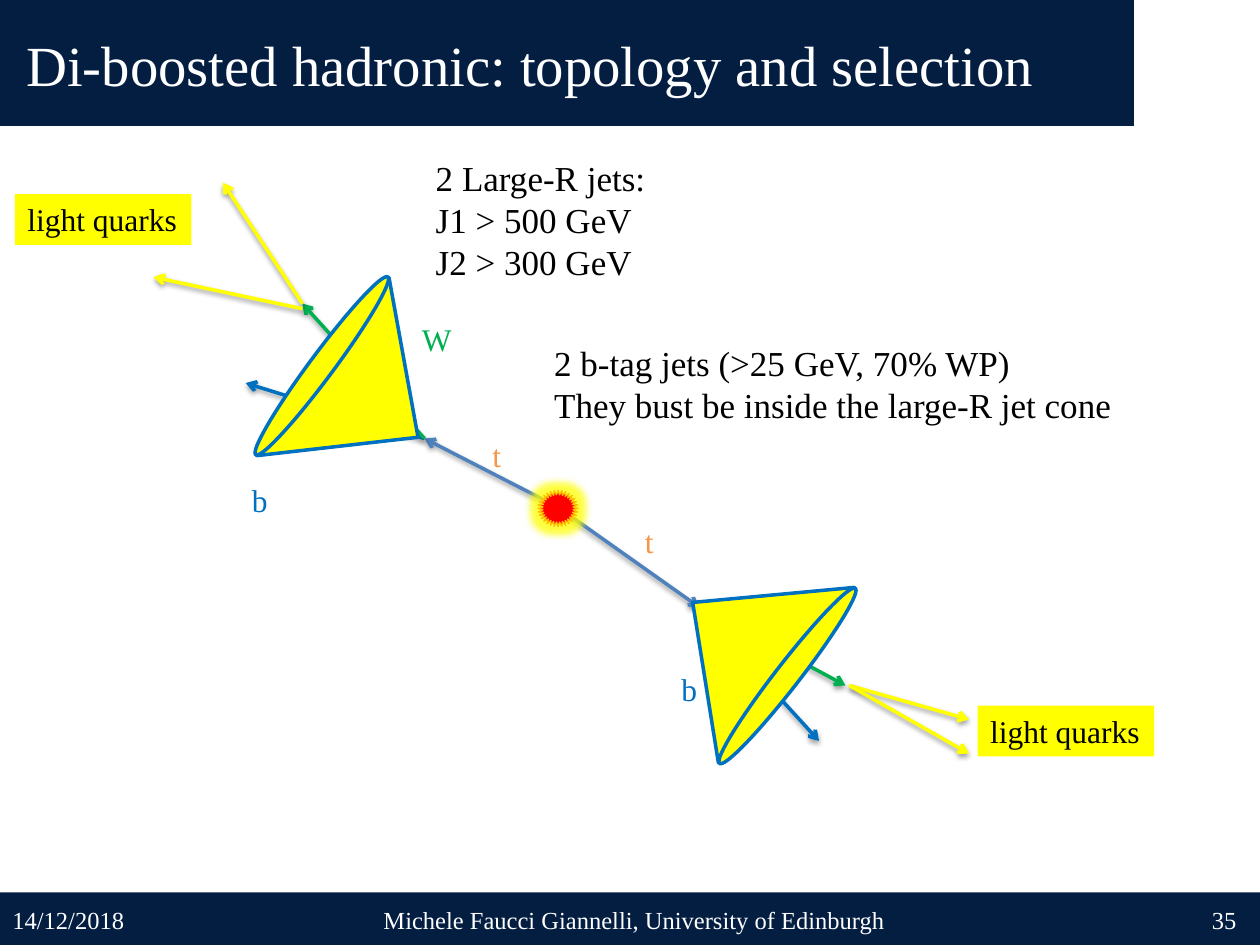
from dataclasses import dataclass
from math import cos, radians, sin
from typing import Optional

from lxml.etree import SubElement
from pptx import Presentation
from pptx.dml.color import RGBColor
from pptx.enum.shapes import MSO_CONNECTOR as Connector, MSO_SHAPE as Preset
from pptx.enum.text import MSO_ANCHOR as Anchor, PP_ALIGN as Align
from pptx.oxml.ns import qn
from pptx.util import Pt

NAVY = RGBColor(0x04, 0x1E, 0x42)
WHITE = RGBColor(0xFF, 0xFF, 0xFF)
BLACK = RGBColor(0x00, 0x00, 0x00)
YELLOW = RGBColor(0xFF, 0xFF, 0x00)
RED = RGBColor(0xFF, 0x00, 0x00)
AMBER = RGBColor(0xFF, 0xC0, 0x00)
ORANGE = RGBColor(0xF7, 0x96, 0x46)
STEEL = RGBColor(0x4F, 0x81, 0xBD)
BLUE = RGBColor(0x00, 0x70, 0xC0)
GREEN = RGBColor(0x00, 0xB0, 0x50)

CONE_WIDTH, CONE_HEIGHT, RIM_HEIGHT = 126.7, 67.7, 13.7
RIM_OFFSET = 34.6


@dataclass
class Block:
    left: float
    top: float
    width: float
    height: float
    preset: Preset = Preset.RECTANGLE
    fill: RGBColor = NAVY
    line: Optional[RGBColor] = None
    line_width: float = 2
    rotation: float = 0


@dataclass
class Arrow:
    start: tuple[float, float]
    end: tuple[float, float]
    color: RGBColor


@dataclass
class Cone:
    center_x: float
    center_y: float
    rotation: float


@dataclass
class Label:
    left: float
    top: float
    width: float
    height: float
    lines: tuple[str, ...]
    size: float = 18
    color: RGBColor = BLACK
    wrap: bool = False
    anchor: Anchor = Anchor.TOP
    align: Align = Align.LEFT
    fill: Optional[RGBColor] = None


def add_effect(shape, kind: str, color: RGBColor, alpha: int, **values: str) -> None:
    properties = shape._element.spPr
    effects = properties.find(qn("a:effectLst"))
    if effects is None:
        effects = SubElement(properties, qn("a:effectLst"))
    effect = SubElement(effects, qn(f"a:{kind}"), **values)
    tint = SubElement(effect, qn("a:srgbClr"), val=str(color))
    SubElement(tint, qn("a:alpha"), val=str(alpha * 1000))


def draw_block(page, block: Block):
    shape = page.shapes.add_shape(
        block.preset, Pt(block.left), Pt(block.top), Pt(block.width), Pt(block.height))
    shape.shadow.inherit = False
    shape.rotation = block.rotation
    shape.fill.solid()
    shape.fill.fore_color.rgb = block.fill
    if block.line is None:
        shape.line.fill.background()
    else:
        shape.line.color.rgb = block.line
        shape.line.width = Pt(block.line_width)
    return shape


def draw_arrow(page, arrow: Arrow) -> None:
    ends = [Pt(value) for value in arrow.start + arrow.end]
    connector = page.shapes.add_connector(Connector.STRAIGHT, *ends)
    connector.line.color.rgb = arrow.color
    connector.line.width = Pt(2)
    SubElement(connector.line._get_or_add_ln(), qn("a:tailEnd"), type="arrow")
    add_effect(connector, "outerShdw", BLACK, 38, blurRad=str(Pt(3.1)),
               dist=str(Pt(1.6)), dir="5400000", rotWithShape="0")


def draw_cone(page, cone: Cone) -> None:
    angle = radians(cone.rotation)
    rim_x = cone.center_x - RIM_OFFSET * sin(angle)
    rim_y = cone.center_y + RIM_OFFSET * cos(angle)
    parts = (
        (Preset.ISOSCELES_TRIANGLE, cone.center_x, cone.center_y, CONE_HEIGHT, cone.rotation),
        (Preset.OVAL, rim_x, rim_y, RIM_HEIGHT, (cone.rotation + 180) % 360),
    )
    for preset, x, y, height, rotation in parts:
        draw_block(page, Block(x - CONE_WIDTH / 2, y - height / 2, CONE_WIDTH, height,
                               preset, YELLOW, BLUE, rotation=rotation))


def draw_label(page, label: Label) -> None:
    box = page.shapes.add_textbox(
        Pt(label.left), Pt(label.top), Pt(label.width), Pt(label.height))
    if label.fill is not None:
        box.fill.solid()
        box.fill.fore_color.rgb = label.fill
    frame = box.text_frame
    frame.word_wrap = label.wrap
    frame.vertical_anchor = label.anchor
    font_values = {"name": "Times New Roman", "size": Pt(label.size)}
    for index, line in enumerate(label.lines):
        para = frame.paragraphs[0] if index == 0 else frame.add_paragraph()
        para.alignment = label.align
        span = para.add_run()
        span.text = line
        for name, value in font_values.items():
            setattr(span.font, name, value)
        span.font.color.rgb = label.color


BANDS = (Block(0, 0, 648, 72), Block(0, 510, 720, 30))
LEFT_TOP, LEFT_W = (242.6, 250.6), (172.8, 173.5)
RIGHT_W = (485.3, 391.7)
ARROWS = (
    Arrow((323.3, 293), (399.6, 347), STEEL),
    Arrow((319.7, 290.2), LEFT_TOP, STEEL),
    Arrow(LEFT_TOP, (140.4, 218.9), BLUE),
    Arrow(LEFT_TOP, LEFT_W, GREEN),
    Arrow((397.4, 345.6), (483.1, 391.7), GREEN),
    Arrow((398.2, 347), (468, 423.4), BLUE),
    Arrow(RIGHT_W, (553.7, 411.1), YELLOW),
    Arrow(RIGHT_W, (553.7, 430.6), YELLOW),
    Arrow(LEFT_W, (127.4, 104.4), YELLOW),
    Arrow((172.8, 176.4), (87.8, 158.4), YELLOW),
)
CONES = (Cone(422.6, 365, 307.8), Cone(211.7, 229.7, 126.6))
COLLISION = Block(307.4, 280.1, 23, 20.9, Preset.STAR_32_POINT, RED, AMBER, 0.75)
FOOTER = {"size": 14, "color": WHITE, "wrap": True, "anchor": Anchor.MIDDLE}
LABELS = (
    Label(7.9, 0, 648, 72.7, ("Di-boosted hadronic: topology and selection",),
          32.4, WHITE, True, Anchor.MIDDLE),
    Label(136.8, 271.4, 24.5, 29, ("b",), color=BLUE),
    Label(382.3, 379.4, 24.5, 29, ("b",), color=BLUE),
    Label(234, 179.3, 31.7, 29, ("W",), color=GREEN),
    Label(274.3, 245.5, 19.4, 29, ("t",), color=ORANGE),
    Label(361.4, 294.5, 19.4, 29, ("t",), color=ORANGE),
    Label(241.9, 85.7, 135.4, 80, ("2 Large-R jets:", "J1 > 500 GeV", "J2 > 300 GeV"), 20),
    Label(309.6, 191.5, 373.7, 55.4,
          ("2 b-tag jets (>25 GeV, 70% WP)", "They bust be inside the large-R jet cone"),
          20, wrap=True),
    Label(558.7, 403.2, 100.8, 29, ("light quarks",), fill=YELLOW),
    Label(8.6, 110.9, 100.8, 29, ("light quarks",), fill=YELLOW),
    Label(0, 511.2, 167.8, 28.8, ("14/12/2018",), **FOOTER),
    Label(206.6, 511.2, 311.8, 28.8, ("Michele Faucci Giannelli, University of Edinburgh",),
          align=Align.CENTER, **FOOTER),
    Label(545.8, 511.2, 167.8, 28.8, ("35",), align=Align.RIGHT, **FOOTER),
)


def main() -> None:
    deck = Presentation()
    deck.slide_width, deck.slide_height = Pt(720), Pt(540)
    page = deck.slides.add_slide(deck.slide_layouts[6])
    for band in BANDS:
        draw_block(page, band)
    for arrow in ARROWS:
        draw_arrow(page, arrow)
    star = draw_block(page, COLLISION)
    add_effect(star, "glow", YELLOW, 75, rad=str(Pt(8)))
    for cone in CONES:
        draw_cone(page, cone)
    for label in LABELS:
        draw_label(page, label)
    deck.save("out.pptx")


if __name__ == "__main__":
    main()
